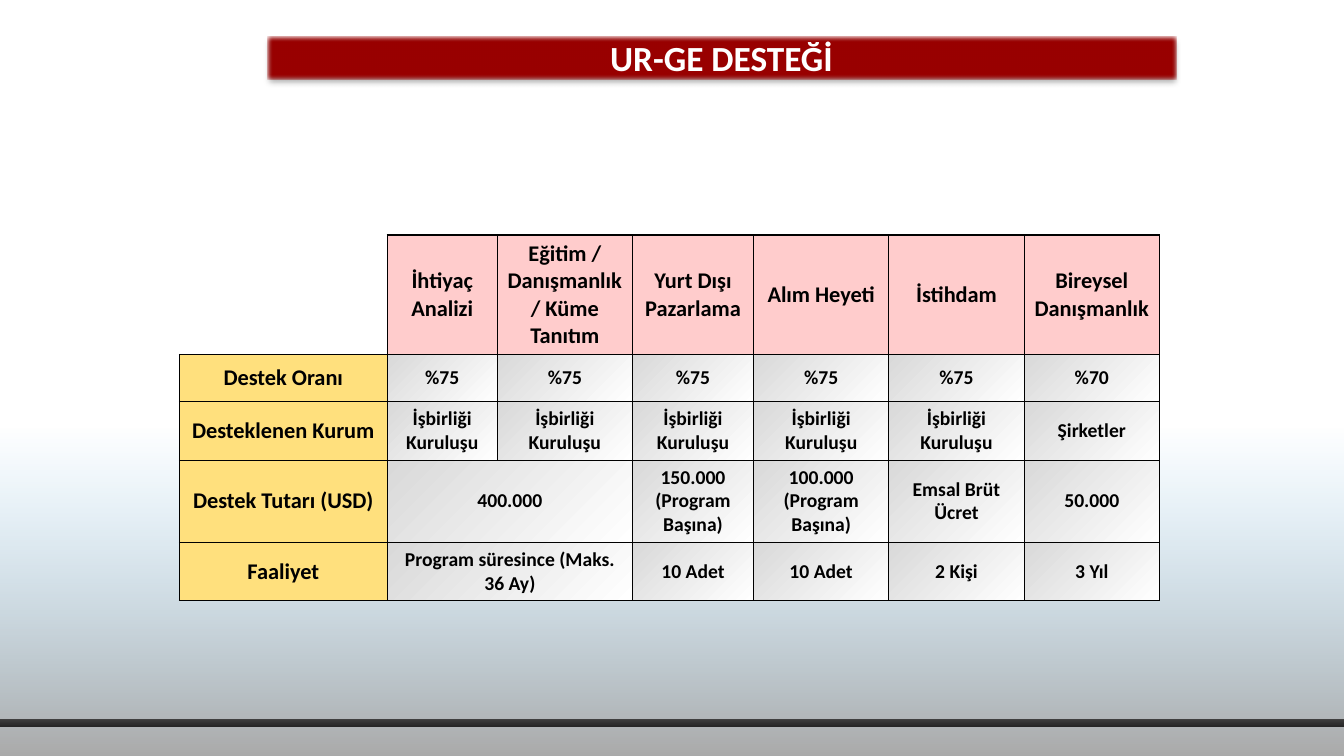
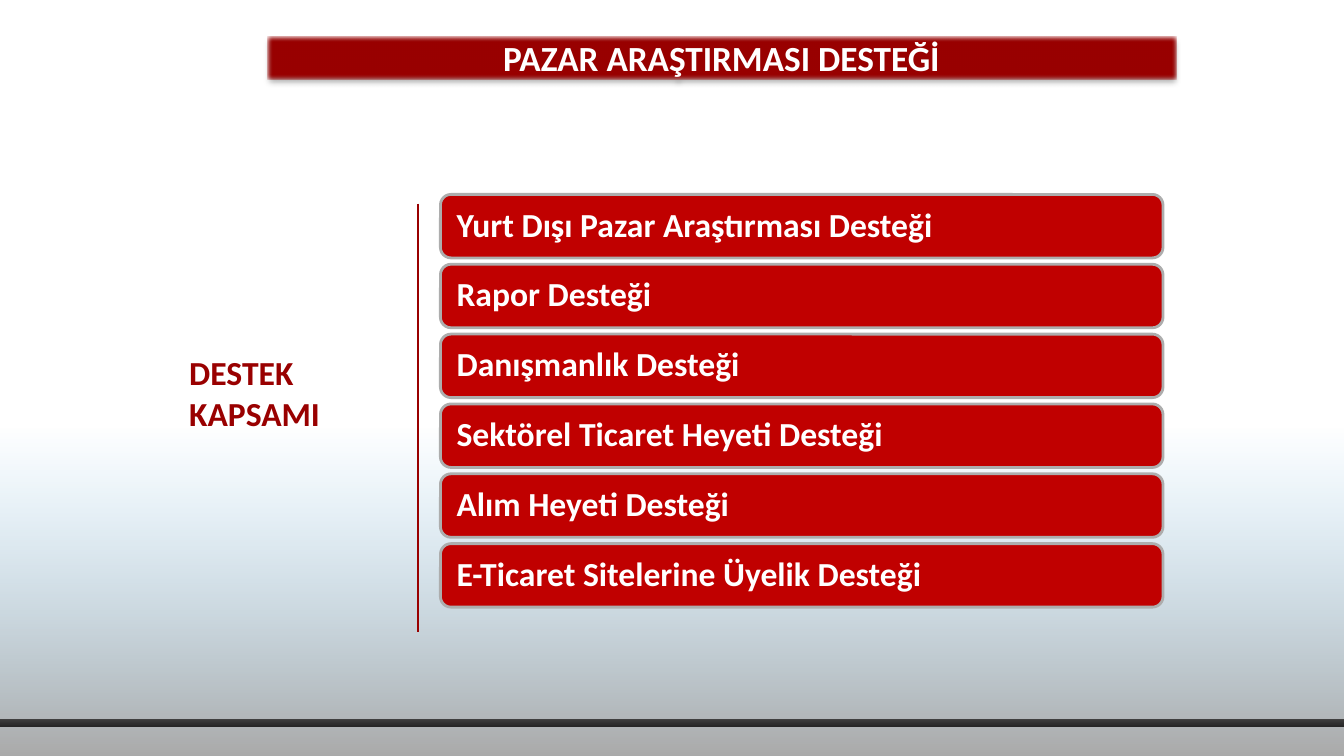
from lxml import etree
from pptx import Presentation
from pptx.dml.color import RGBColor
from pptx.enum.shapes import MSO_CONNECTOR, MSO_SHAPE
from pptx.enum.text import MSO_ANCHOR, PP_ALIGN
from pptx.oxml.ns import qn
from pptx.util import Cm, Pt

WHITE = RGBColor(0xFF, 0xFF, 0xFF)
BLACK = RGBColor(0x00, 0x00, 0x00)
DARK_RED = RGBColor(0x99, 0x00, 0x00)
RED = RGBColor(0xC0, 0x00, 0x00)
SILVER = RGBColor(0xAD, 0xAD, 0xAD)
PINK = RGBColor(0xFF, 0xCC, 0xCC)
YELLOW = RGBColor(0xFF, 0xE0, 0x7D)
LIGHT_GREY = RGBColor(0xD9, 0xD9, 0xD9)
SKY = RGBColor(0x6C, 0xB9, 0xE7)
GREY = RGBColor(0x80, 0x80, 0x80)
COAL = RGBColor(0x26, 0x26, 0x26)
CHARCOAL = RGBColor(0x40, 0x40, 0x40)

WIDTH, HEIGHT = 33.87, 19.05
FONT = {"name": "Calibri", "bold": True}
CENTRE, LEFT = PP_ALIGN.CENTER, PP_ALIGN.LEFT


def add_xml(parent, tag, **attributes):
    child = etree.SubElement(parent, qn(tag))
    for key, value in attributes.items():
        child.set(key, str(value))
    return child


def add_colour(parent, rgb, alpha=100):
    colour = add_xml(parent, "a:srgbClr", val=rgb)
    if alpha < 100:
        add_xml(colour, "a:alpha", val=alpha * 1000)


def fill_gradient(fill, properties, stops, angle):
    """Stops are (colour, opacity in percent), evenly spread."""
    fill.gradient()
    gradient = properties.find(qn("a:gradFill"))
    for child in list(gradient):
        gradient.remove(child)
    stop_list = add_xml(gradient, "a:gsLst")
    for index, (rgb, alpha) in enumerate(stops):
        stop = add_xml(stop_list, "a:gs", pos=index * 100000 // (len(stops) - 1))
        add_colour(stop, rgb, alpha)
    add_xml(gradient, "a:lin", ang=angle * 60000, scaled=0)


class Deck:
    def __init__(self):
        self.presentation = Presentation()
        self.presentation.slide_width = Cm(WIDTH)
        self.presentation.slide_height = Cm(HEIGHT)
        self.slide = None

    def start_slide(self, title):
        self.slide = self.presentation.slides.add_slide(self.presentation.slide_layouts[6])
        # Background fade and dark floor line
        for top, height, stops, angle in (
            (10.72, 8.33, ((SKY, 0), (GREY, 67)), 90),
            (18.11, 0.2, ((COAL, 100), (CHARCOAL, 100)), 270),
        ):
            band = self.box(0, top, WIDTH, height)
            fill_gradient(band.fill, band._element.spPr, stops, angle)
        # Title band with shadow and soft edge
        heading = self.box(6.73, 0.91, 22.91, 1.09, DARK_RED)
        effects = heading._element.spPr.find(qn("a:effectLst"))
        shadow = add_xml(effects, "a:outerShdw", blurRad=Pt(3.5), dist=Pt(2.2),
                         dir=90 * 60000, rotWithShape=0)
        add_colour(shadow, BLACK, 32)
        add_xml(effects, "a:softEdge", rad=Pt(1))
        self.put_text(heading.text_frame, title, 25.2, WHITE, CENTRE)

    def box(self, left, top, width, height, colour=None, preset=MSO_SHAPE.RECTANGLE):
        shape = self.slide.shapes.add_shape(preset, Cm(left), Cm(top), Cm(width), Cm(height))
        shape.shadow.inherit = False
        shape.line.fill.background()
        if colour is not None:
            shape.fill.solid()
            shape.fill.fore_color.rgb = colour
        return shape

    def put_text(self, frame, text, size, colour, align=LEFT):
        frame.word_wrap = True
        frame.vertical_anchor = MSO_ANCHOR.MIDDLE
        paragraph = frame.paragraphs[0]
        paragraph.alignment = align
        run = paragraph.add_run()
        run.text = text
        for key, value in {**FONT, "size": Pt(size)}.items():
            setattr(run.font, key, value)
        run.font.color.rgb = colour
        return paragraph

    def label(self, left, top, width, height, text):
        area = self.slide.shapes.add_textbox(Cm(left), Cm(top), Cm(width), Cm(height))
        self.put_text(area.text_frame, text, 24, DARK_RED)

    def divider(self, x, top, bottom):
        line = self.slide.shapes.add_connector(
            MSO_CONNECTOR.STRAIGHT, Cm(x), Cm(top), Cm(x), Cm(bottom))
        line.line.color.rgb = DARK_RED
        line.line.width = Pt(1.5)
        add_xml(line._element.spPr, "a:effectLst")

    def bar_list(self, left, top, width, height, pitch, items):
        for index, item in enumerate(items):
            bar = self.box(left, top + index * pitch, width, height, RED,
                           MSO_SHAPE.ROUNDED_RECTANGLE)
            bar.line.color.rgb = SILVER
            bar.line.width = Pt(2)
            bar.text_frame.margin_left = Cm(0.33)
            self.put_text(bar.text_frame, item, 24, WHITE).line_spacing = 0.9

    def borders(self, cell, visible):
        properties = cell._tc.get_or_add_tcPr()
        for side in "LRTB":
            line = add_xml(properties, f"a:ln{side}", w=Pt(1))
            if side in visible:
                add_colour(add_xml(line, "a:solidFill"), BLACK)
            else:
                add_xml(line, "a:noFill")

    def table(self, left, top, widths, heights, rows, merges):
        grid = self.slide.shapes.add_table(
            len(rows), len(widths), Cm(left), Cm(top),
            Cm(sum(widths)), Cm(sum(heights))).table
        grid.first_row = grid.horz_banding = False
        for column, width in zip(grid.columns, widths):
            column.width = Cm(width)
        for row, height in zip(grid.rows, heights):
            row.height = Cm(height)
        for row_index, texts in enumerate(rows):
            for column_index, text in enumerate(texts):
                cell = grid.cell(row_index, column_index)
                corner = row_index == column_index == 0
                heading = row_index == 0 or column_index == 0
                self.borders(cell, "RB" if corner else "LRTB")
                if corner:
                    cell.fill.background()
                elif heading:
                    cell.fill.solid()
                    cell.fill.fore_color.rgb = PINK if row_index == 0 else YELLOW
                else:
                    fill_gradient(cell.fill, cell._tc.tcPr,
                                  ((LIGHT_GREY, 100), (WHITE, 100)), 45)
                if text:
                    self.put_text(cell.text_frame, text, 16 if heading else 14, BLACK, CENTRE)
                cell.vertical_anchor = MSO_ANCHOR.MIDDLE
        for row_index, first, last in merges:
            grid.cell(row_index, first).merge(grid.cell(row_index, last))


def main():
    deck = Deck()

    # Support rates and amounts
    deck.start_slide("UR-GE DESTEĞİ")
    partner = "İşbirliği Kuruluşu"
    deck.table(
        4.52, 5.92,
        widths=[5.24, 2.77, 3.41, 3.05, 3.41, 3.41, 3.41],
        heights=[3, 1.19, 1.47, 2.07, 1.47],
        rows=[
            ["", "İhtiyaç Analizi", "Eğitim / Danışmanlık / Küme Tanıtım",
             "Yurt Dışı Pazarlama", "Alım Heyeti", "İstihdam", "Bireysel Danışmanlık"],
            ["Destek Oranı", *["%75"] * 5, "%70"],
            ["Desteklenen Kurum", *[partner] * 5, "Şirketler"],
            ["Destek Tutarı (USD)", "400.000", "", "150.000 (Program Başına)",
             "100.000 (Program Başına)", "Emsal Brüt Ücret", "50.000"],
            ["Faaliyet", "Program süresince (Maks. 36 Ay)", "", "10 Adet", "10 Adet",
             "2 Kişi", "3 Yıl"],
        ],
        merges=[(3, 1, 2), (4, 1, 2)],
    )

    # Scope of market research support
    deck.start_slide("PAZAR ARAŞTIRMASI DESTEĞİ")
    deck.divider(10.54, 5.13, 15.93)
    deck.label(4.52, 8.74, 5.79, 2.31, "DESTEK KAPSAMI")
    deck.bar_list(11.1, 4.9, 18.21, 1.6, 1.76, [
        "Yurt Dışı Pazar Araştırması Desteği",
        "Rapor Desteği",
        "Danışmanlık Desteği",
        "Sektörel Ticaret Heyeti Desteği",
        "Alım Heyeti Desteği",
        "E-Ticaret Sitelerine Üyelik Desteği",
    ])

    deck.presentation.save("out.pptx")


if __name__ == "__main__":
    main()
